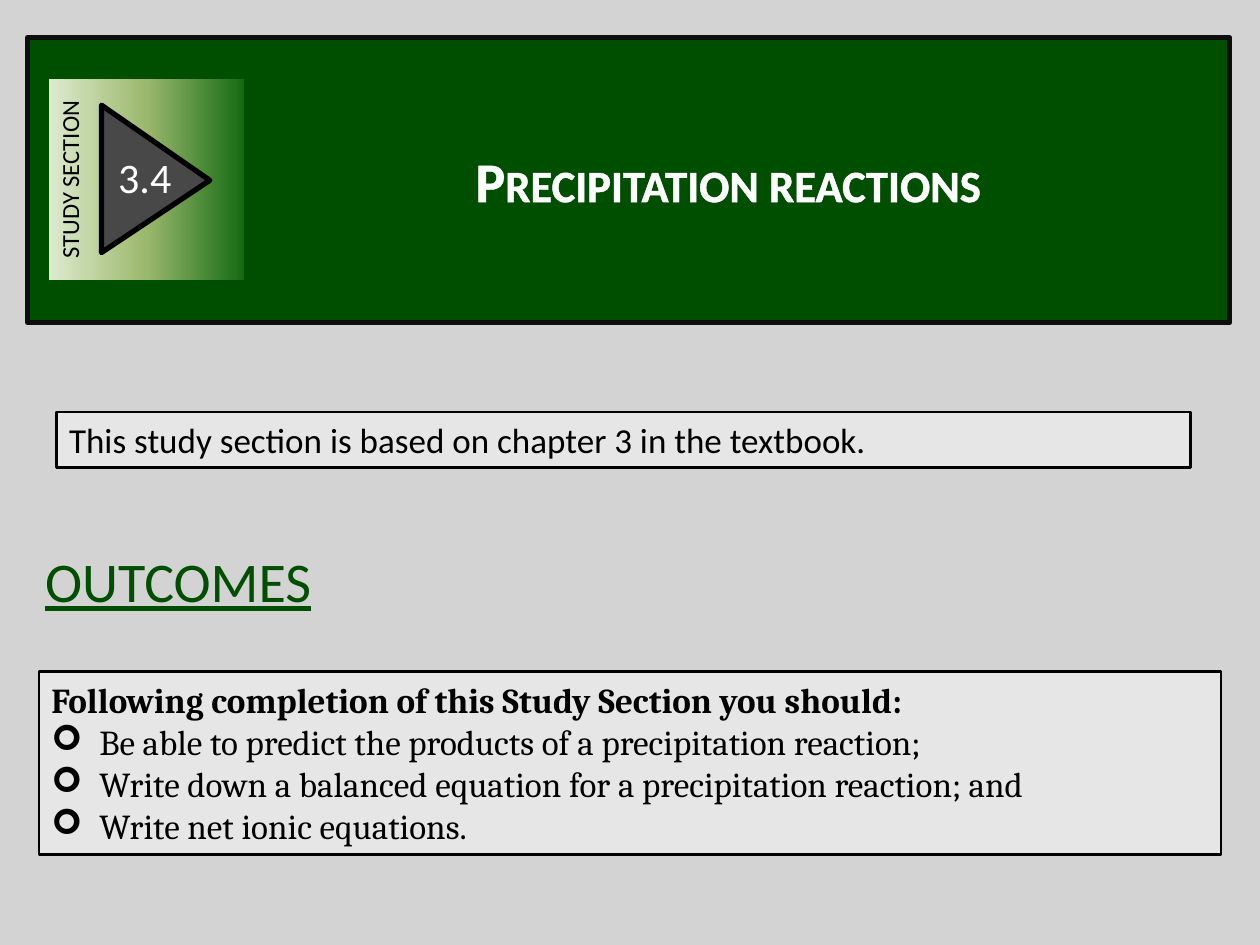
from dataclasses import dataclass

from lxml import etree
from pptx import Presentation
from pptx.dml.color import RGBColor
from pptx.enum.shapes import MSO_SHAPE
from pptx.enum.text import MSO_ANCHOR, MSO_AUTO_SIZE, PP_ALIGN
from pptx.oxml.ns import qn
from pptx.util import Inches, Pt

RECTANGLE, TRIANGLE = MSO_SHAPE.RECTANGLE, MSO_SHAPE.ISOSCELES_TRIANGLE
TOP, MIDDLE = MSO_ANCHOR.TOP, MSO_ANCHOR.MIDDLE
LEFT, CENTER = PP_ALIGN.LEFT, PP_ALIGN.CENTER
GROW = MSO_AUTO_SIZE.SHAPE_TO_FIT_TEXT

BLACK = RGBColor(0x00, 0x00, 0x00)
WHITE = RGBColor(0xFF, 0xFF, 0xFF)
INK = RGBColor(0x0D, 0x0D, 0x0D)
GREEN = RGBColor(0x00, 0x4E, 0x00)
CHARCOAL = RGBColor(0x48, 0x48, 0x48)
BACKGROUND = RGBColor(0xD3, 0xD3, 0xD3)
PANEL = RGBColor(0xE6, 0xE6, 0xE6)
BADGE_STOPS = (
    (0, RGBColor(0xDD, 0xEB, 0xCF)),
    (50, RGBColor(0x9C, 0xB8, 0x6E)),
    (100, RGBColor(0x15, 0x6B, 0x13)),
)

# The slide is a grid of 100 columns by 75 rows
COLUMNS, ROWS = 100, 75
CELL = Inches(0.1)
BULLET_INDENT = Inches(0.38)


@dataclass
class Box:
    """An area in grid columns and rows."""
    left: float
    top: float
    width: float
    height: float

    def inside(self, left, top, width, height):
        return Box(self.left + left, self.top + top, width, height)

    def lengths(self):
        return [round(value * CELL)
                for value in (self.left, self.top, self.width, self.height)]


def add_panel(shapes, box, kind, fill, line, line_width):
    shape = shapes.add_shape(kind, *box.lengths())
    shape.shadow.inherit = False
    if fill is not None:
        shape.fill.solid()
        shape.fill.fore_color.rgb = fill
    if line is None:
        shape.line.fill.background()
    else:
        shape.line.color.rgb = line
        shape.line.width = Pt(line_width)
    return shape


def set_frame(frame, anchor=TOP, wrap=True):
    frame.word_wrap = wrap
    frame.auto_size = GROW
    frame.vertical_anchor = anchor


def add_run(paragraph, text, size, color, font="Calibri", align=LEFT, bold=False):
    paragraph.alignment = align
    run = paragraph.add_run()
    run.text = text
    run.font.name = font
    run.font.size = Pt(size)
    run.font.bold = bold
    run.font.color.rgb = color
    return run


def outline_text(run, color, width):
    properties = run.font._element
    line = etree.Element(qn("a:ln"), w=str(Pt(width)))
    fill = etree.SubElement(line, qn("a:solidFill"))
    etree.SubElement(fill, qn("a:srgbClr"), val=str(color))
    properties.insert(0, line)


def fill_gradient(shape, stops):
    shape.fill.gradient()
    shape.fill.gradient_angle = 270
    stop_list = shape._element.spPr.find(".//" + qn("a:gsLst"))
    for child in list(stop_list):
        stop_list.remove(child)
    for percent, color in stops:
        stop = etree.SubElement(stop_list, qn("a:gs"), pos=str(percent * 1000))
        etree.SubElement(stop, qn("a:srgbClr"), val=str(color))


def add_bullet(paragraph, symbol):
    properties = paragraph._element.get_or_add_pPr()
    properties.set("marL", str(BULLET_INDENT))
    properties.set("indent", str(-BULLET_INDENT))
    etree.SubElement(properties, qn("a:buFont"), typeface="Wingdings")
    etree.SubElement(properties, qn("a:buChar"), char=symbol)


def add_badge(slide, box, label, number):
    shapes = slide.shapes.add_group_shape().shapes

    # Gradient tile, turned so that its label reads upwards
    tile = add_panel(shapes, box.inside(0, 0, 16, 15.5), RECTANGLE, None, None, 0)
    tile.rotation = 270
    fill_gradient(tile, BADGE_STOPS)
    set_frame(tile.text_frame)
    add_run(tile.text_frame.paragraphs[0], label, 14, BLACK, align=CENTER)

    # Arrow with the section number
    arrow = add_panel(shapes, box.inside(2.9, 3.4, 11.7, 8.6), TRIANGLE, CHARCOAL, BLACK, 3)
    arrow.rotation = 90
    arrow.adjustments[0] = 0.51
    number_box = shapes.add_textbox(*box.inside(4.8, 5, 6.3, 5).lengths())
    set_frame(number_box.text_frame, wrap=False)
    add_run(number_box.text_frame.paragraphs[0], number, 24, WHITE)


def add_banner(slide, box, title_text, label, number):
    banner = add_panel(slide.shapes, box, RECTANGLE, GREEN, INK, 3)

    # Title, in front of the banner
    title = slide.shapes.title
    banner._element.addnext(title._element)
    title.left, title.top, title.width, title.height = (
        box.inside(18.9, 8.1, 73.4, 6.4).lengths())
    set_frame(title.text_frame)
    run = add_run(title.text_frame.paragraphs[0], title_text, 32, WHITE,
                  align=CENTER, bold=True)
    run.font._element.set("cap", "small")
    outline_text(run, WHITE, 0.75)

    add_badge(slide, box.inside(1.4, 3.5, 16, 15.5), label, number)


def add_heading(slide, box, text):
    heading = slide.shapes.add_textbox(*box.lengths())
    set_frame(heading.text_frame)
    run = add_run(heading.text_frame.paragraphs[0], text, 32, GREEN)
    run.font.underline = True
    outline_text(run, BLACK, 0.25)


def add_note(slide, box, lead, points=(), font="Calibri", bold=False):
    note = add_panel(slide.shapes, box, RECTANGLE, PANEL, BLACK, 1.5)
    frame = note.text_frame
    set_frame(frame, anchor=MIDDLE)
    add_run(frame.paragraphs[0], lead, 20, BLACK, font, bold=bold)
    for point in points:
        paragraph = frame.add_paragraph()
        add_run(paragraph, point, 20, BLACK, font)
        add_bullet(paragraph, "➢")


def main():
    presentation = Presentation()
    presentation.slide_width = COLUMNS * CELL
    presentation.slide_height = ROWS * CELL
    slide = presentation.slides.add_slide(presentation.slide_layouts[5])
    slide.background.fill.solid()
    slide.background.fill.fore_color.rgb = BACKGROUND

    add_banner(slide, Box(2.2, 3, 95.4, 22.6),
               "Precipitation reactions", "STUDY SECTION", "3.4")
    add_heading(slide, Box(2.6, 42.9, 26.7, 6.4), "OUTCOMES")
    add_note(slide, Box(3.1, 53.3, 93.8, 14.5),
             "Following completion of this Study Section you should:",
             ("Be able to predict the products of a precipitation reaction;",
              "Write down a balanced equation for a precipitation reaction; and",
              "Write net ionic equations."),
             font="Cambria", bold=True)
    add_note(slide, Box(4.5, 32.7, 90, 4.4),
             "This study section is based on chapter 3 in the textbook.")
    presentation.save("out.pptx")


if __name__ == "__main__":
    main()
